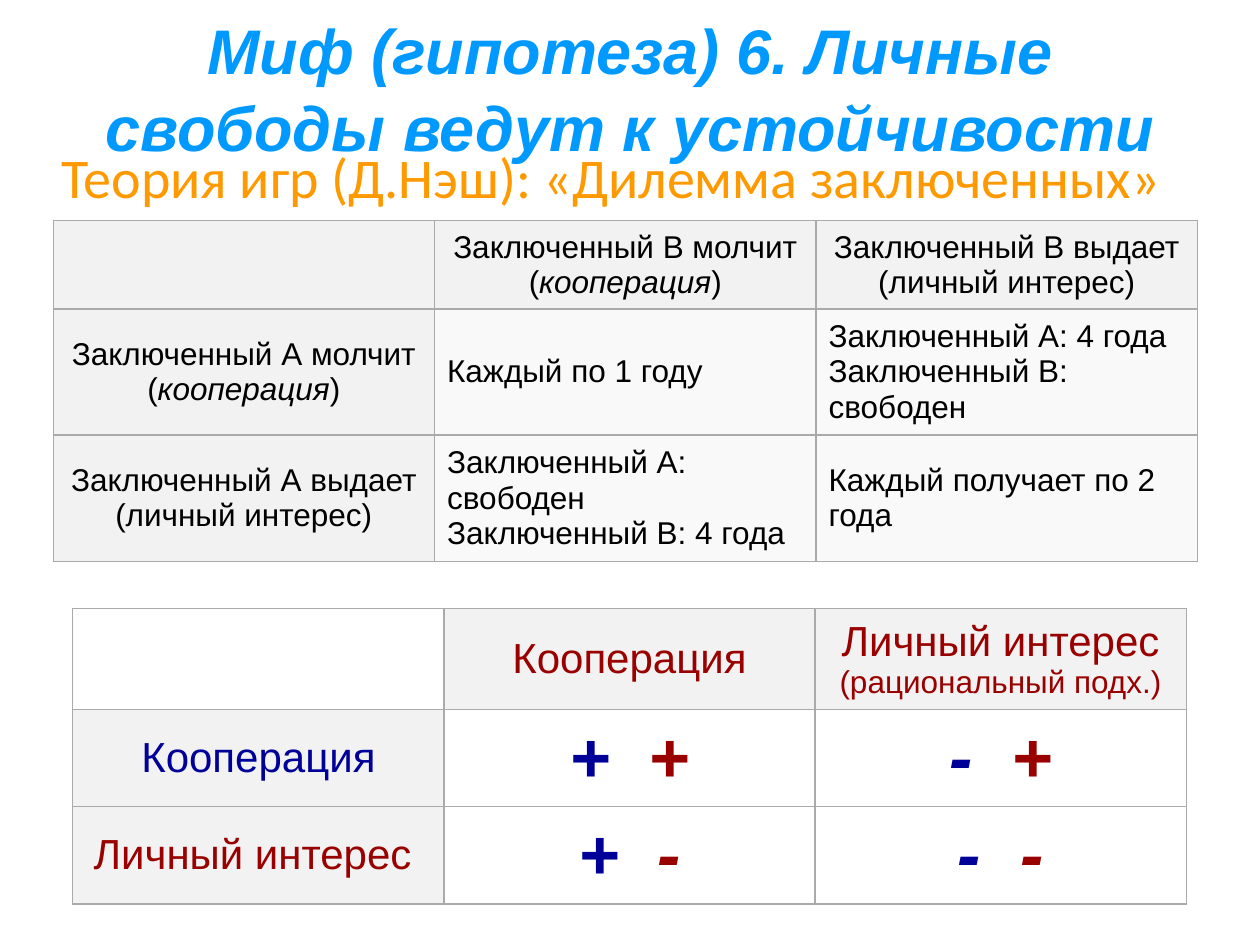
from dataclasses import dataclass

from lxml import etree
from pptx import Presentation
from pptx import util as u
from pptx.dml.color import RGBColor
from pptx.enum import text
from pptx.oxml import ns

SKY = RGBColor(0x00, 0x99, 0xFF)
ORANGE = RGBColor(0xFF, 0x99, 0x00)
BLACK = RGBColor(0x00, 0x00, 0x00)
WHITE = RGBColor(0xFF, 0xFF, 0xFF)
RED = RGBColor(0x99, 0x00, 0x00)
BLUE = RGBColor(0x00, 0x00, 0x99)
HEADER_GREY = RGBColor(0xF2, 0xF2, 0xF2)
BODY_GREY = RGBColor(0xF9, 0xF9, 0xF9)
BORDER_GREY = RGBColor(0xAA, 0xAA, 0xAA)

CENTER = text.PP_ALIGN.CENTER
LEFT = text.PP_ALIGN.LEFT


@dataclass(frozen=True)
class Span:
    words: str
    size: float = 18
    color: RGBColor = BLACK
    bold: bool = False
    italic: bool = False
    font: str = "Arial"


@dataclass(frozen=True)
class CellSpec:
    spans: tuple[Span, ...] = ()
    fill: RGBColor = HEADER_GREY
    align: text.PP_ALIGN = CENTER


@dataclass(frozen=True)
class Grid:
    left: float
    top: float
    column_width: float
    row_heights: tuple[float, ...]
    rows: tuple[tuple[CellSpec, ...], ...]


def write_spans(para, spans: tuple[Span, ...]) -> None:
    """Fill a paragraph; a newline inside a span becomes a line break."""
    for span in spans:
        for index, line in enumerate(span.words.split("\n")):
            if index:
                para.add_line_break()
            run = para.add_run()
            run.text = line
            font = run.font
            font.name, font.size = span.font, u.Pt(span.size)
            font.bold, font.italic = span.bold, span.italic
            font.color.rgb = span.color


def add_text(page, left: float, top: float, width: float, height: float, span: Span):
    box = page.shapes.add_textbox(u.Cm(left), u.Cm(top), u.Cm(width), u.Cm(height))
    box.text_frame.word_wrap = True
    write_spans(box.text_frame.paragraphs[0], (span,))
    return box


def add_borders(cell) -> None:
    props = cell._tc.get_or_add_tcPr()
    for side in ("lnL", "lnR", "lnT", "lnB"):
        line = etree.SubElement(props, ns.qn(f"a:{side}"), w=str(u.Pt(0.75)))
        fill = etree.SubElement(line, ns.qn("a:solidFill"))
        etree.SubElement(fill, ns.qn("a:srgbClr"), val=str(BORDER_GREY))


def add_grid(page, grid: Grid) -> None:
    columns = len(grid.rows[0])
    frame = page.shapes.add_table(
        len(grid.rows), columns, u.Cm(grid.left), u.Cm(grid.top),
        u.Cm(grid.column_width * columns), u.Cm(sum(grid.row_heights)))
    table = frame.table
    table.first_row = table.horz_banding = False
    for column in table.columns:
        column.width = u.Cm(grid.column_width)
    for row, height, specs in zip(table.rows, grid.row_heights, grid.rows):
        row.height = u.Cm(height)
        for cell, spec in zip(row.cells, specs):
            add_borders(cell)
            cell.fill.solid()
            cell.fill.fore_color.rgb = spec.fill
            cell.vertical_anchor = text.MSO_ANCHOR.MIDDLE
            para = cell.text_frame.paragraphs[0]
            para.alignment = spec.align
            write_spans(para, spec.spans)


def silent(prisoner: str) -> CellSpec:
    return CellSpec((Span(f"Заключенный {prisoner} молчит ("),
                     Span("кооперация", italic=True), Span(")")))


def betrays(prisoner: str) -> CellSpec:
    return CellSpec((Span(f"Заключенный {prisoner} выдает (личный интерес)"),))


def outcome(words: str) -> CellSpec:
    return CellSpec((Span(words),), BODY_GREY, LEFT)


def strategy(words: str, color: RGBColor, note: str = "") -> CellSpec:
    spans = (Span(words, 24, color),)
    return CellSpec(spans + ((Span(note, 18, color),) if note else ()))


def payoff(first: str, second: str) -> CellSpec:
    """Signs of both players' results, one colour per player."""
    return CellSpec((Span(f"{first}  ", 40, BLUE, True, True),
                     Span(second, 40, RED, True, True)), WHITE)


PRISONERS = Grid(1.07, 4.45, 7.69, (1.68, 2.39, 2.39), (
    (CellSpec(), silent("B"), betrays("B")),
    (silent("А"), outcome("Каждый по 1 году"),
     outcome("Заключенный A: 4 года\nЗаключенный B: свободен")),
    (betrays("А"), outcome("Заключенный A: свободен\nЗаключенный B: 4 года"),
     outcome("Каждый получает по 2 года")),
))

STRATEGIES = Grid(1.47, 12.27, 7.48, (2.01, 1.96, 1.96), (
    (CellSpec(fill=WHITE), strategy("Кооперация", RED),
     strategy("Личный интерес ", RED, "(рациональный подх.)")),
    (strategy("Кооперация", BLUE), payoff("+", "+"), payoff("-", "+")),
    (strategy("Личный интерес ", RED), payoff("+", "-"), payoff("-", "-")),
))


def main() -> None:
    deck = Presentation()
    deck.slide_width, deck.slide_height = u.Cm(25.4), u.Cm(19.05)
    page = deck.slides.add_slide(deck.slide_layouts[6])

    title = add_text(page, 1.27, 0.76, 22.86, 1.98, Span(
        "Миф (гипотеза) 6. Личные свободы ведут к устойчивости",
        36, SKY, True, True))
    title.text_frame.vertical_anchor = text.MSO_ANCHOR.MIDDLE
    title_para = title.text_frame.paragraphs[0]
    title_para.alignment = CENTER
    title_para.line_spacing = u.Pt(44)

    add_grid(page, PRISONERS)
    add_text(page, 0.99, 2.74, 24.41, 2.97, Span(
        "Теория игр (Д.Нэш): «Дилемма заключенных»", 32, ORANGE, font="Calibri"))
    add_grid(page, STRATEGIES)
    deck.save("out.pptx")


if __name__ == "__main__":
    main()
